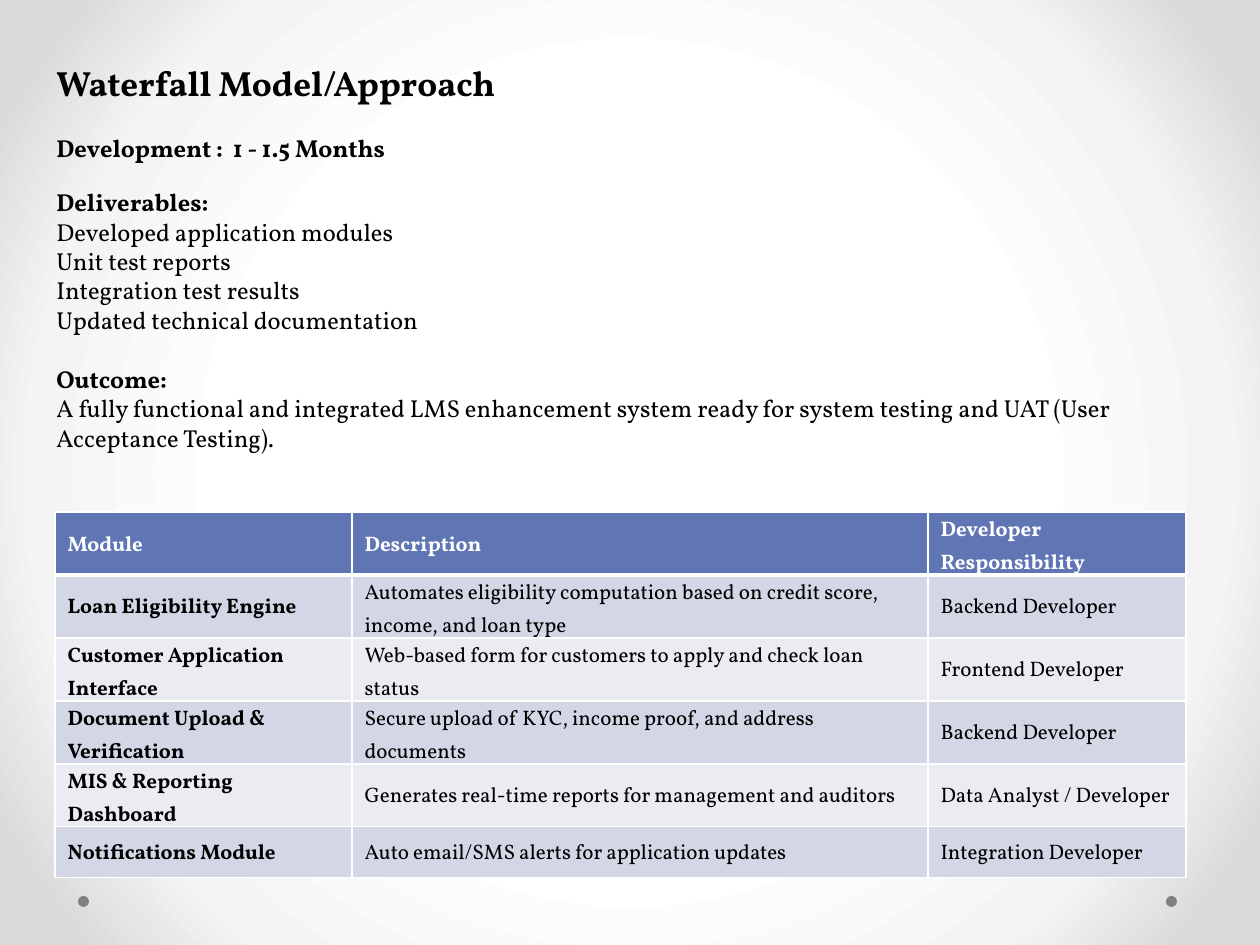
from lxml.etree import SubElement
from pptx import Presentation
from pptx.dml.color import RGBColor
from pptx.enum.shapes import MSO_SHAPE as Shape
from pptx.enum.text import MSO_ANCHOR as Anchor
from pptx.oxml import parse_xml
from pptx.oxml.ns import nsdecls, qn
from pptx.util import Pt

PX = 914400 // 126
FONT = "Vollkorn"
BLACK = RGBColor(0x00, 0x00, 0x00)
WHITE = RGBColor(0xFF, 0xFF, 0xFF)
GREY = RGBColor(0x80, 0x80, 0x80)
HEADER_BLUE = RGBColor(0x60, 0x76, 0xB4)
BANDS = [RGBColor(0xD2, 0xD6, 0xE5), RGBColor(0xEA, 0xEC, 0xF2)]
BACKDROP = [
    (50, WHITE),
    (76, RGBColor(0xF4, 0xF4, 0xF4)),
    (92, RGBColor(0xDA, 0xDA, 0xDA)),
]

# text, size, bold, space before (points)
SUMMARY = [
    ("Waterfall Model/Approach", 20, True, 0),
    ("Development :  1 - 1.5 Months", 14, True, 16.8),
    ("Deliverables:", 14, True, 14.4),
    ("Developed application modules", 14, False, 0),
    ("Unit test reports", 14, False, 0),
    ("Integration test results", 14, False, 0),
    ("Updated technical documentation", 14, False, 0),
    ("Outcome:", 14, True, 16.8),
    ("A fully functional and integrated LMS enhancement system ready for "
     "system testing and UAT (User Acceptance Testing).", 14, False, 0),
]
MODULES = [
    ("Module", "Description", "Developer Responsibility"),
    ("Loan Eligibility Engine",
     "Automates eligibility computation based on credit score, income, and loan type",
     "Backend Developer"),
    ("Customer Application Interface",
     "Web-based form for customers to apply and check loan status",
     "Frontend Developer"),
    ("Document Upload & Verification",
     "Secure upload of KYC, income proof, and address documents",
     "Backend Developer"),
    ("MIS & Reporting Dashboard",
     "Generates real-time reports for management and auditors",
     "Data Analyst / Developer"),
    ("Notifications Module",
     "Auto email/SMS alerts for application updates",
     "Integration Developer"),
]
COLUMN_WIDTHS = [297, 576, 258]
ROW_HEIGHTS = [63] * 5 + [51]


def px(*lengths):
    return [length * PX for length in lengths]


def style_runs(paragraph, size, bold, color):
    for run in paragraph.runs:
        run.font.name = FONT
        run.font.size = Pt(size)
        run.font.bold = bold
        run.font.color.rgb = color


def set_backdrop(slide):
    """Give the slide a radial gradient, white in the middle."""
    stops = "".join(
        f'<a:gs pos="{percent * 1000}"><a:srgbClr val="{color}"/></a:gs>'
        for percent, color in BACKDROP)
    slide.element.cSld.insert(0, parse_xml(
        f'<p:bg {nsdecls("p", "a")}><p:bgPr><a:gradFill rotWithShape="1">'
        f'<a:gsLst>{stops}</a:gsLst><a:path path="circle">'
        '<a:fillToRect l="50000" t="50000" r="50000" b="50000"/></a:path>'
        '</a:gradFill><a:effectLst/></p:bgPr></p:bg>'))


def add_dot(slide, left):
    dot = slide.shapes.add_shape(Shape.OVAL, *px(left, 896, 11, 11))
    dot.shadow.inherit = False
    dot.fill.solid()
    dot.fill.fore_color.rgb = GREY
    dot.line.fill.background()


def add_summary(slide):
    frame = slide.shapes.add_textbox(*px(44, 55, 1142, 416)).text_frame
    frame.word_wrap = True
    for index, (text, size, bold, gap) in enumerate(SUMMARY):
        paragraph = frame.add_paragraph() if index else frame.paragraphs[0]
        paragraph.text = text
        paragraph.space_before = Pt(gap)
        style_runs(paragraph, size, bold, BLACK)


def set_borders(cell, bottom):
    """Draw white cell borders; must run before the cell's fill is set."""
    properties = cell._tc.get_or_add_tcPr()
    for side, width in (("L", 1), ("R", 1), ("T", 1), ("B", bottom)):
        line = SubElement(properties, qn(f"a:ln{side}"), w=str(Pt(width)))
        fill = SubElement(line, qn("a:solidFill"))
        SubElement(fill, qn("a:srgbClr"), val=str(WHITE))


def add_modules(slide):
    table = slide.shapes.add_table(
        len(MODULES), len(COLUMN_WIDTHS),
        *px(55, 512, sum(COLUMN_WIDTHS), sum(ROW_HEIGHTS))).table
    for column, width in zip(table.columns, COLUMN_WIDTHS):
        column.width = width * PX
    for r, (texts, height) in enumerate(zip(MODULES, ROW_HEIGHTS)):
        table.rows[r].height = height * PX
        is_header = r == 0
        for c, text in enumerate(texts):
            cell = table.cell(r, c)
            cell.text = text
            cell.vertical_anchor = Anchor.MIDDLE
            cell.margin_top = cell.margin_bottom = 0
            set_borders(cell, 3 if is_header else 1)
            cell.fill.solid()
            cell.fill.fore_color.rgb = HEADER_BLUE if is_header else BANDS[(r - 1) % 2]
            paragraph = cell.text_frame.paragraphs[0]
            paragraph.line_spacing = 1.15
            style_runs(paragraph, 12, is_header or c == 0,
                       WHITE if is_header else BLACK)


def main():
    deck = Presentation()
    deck.slide_width, deck.slide_height = px(1260, 945)
    slide = deck.slides.add_slide(deck.slide_layouts[6])
    set_backdrop(slide)
    for left in (1166, 78):
        add_dot(slide, left)
    add_summary(slide)
    add_modules(slide)
    deck.save("out.pptx")


if __name__ == "__main__":
    main()
